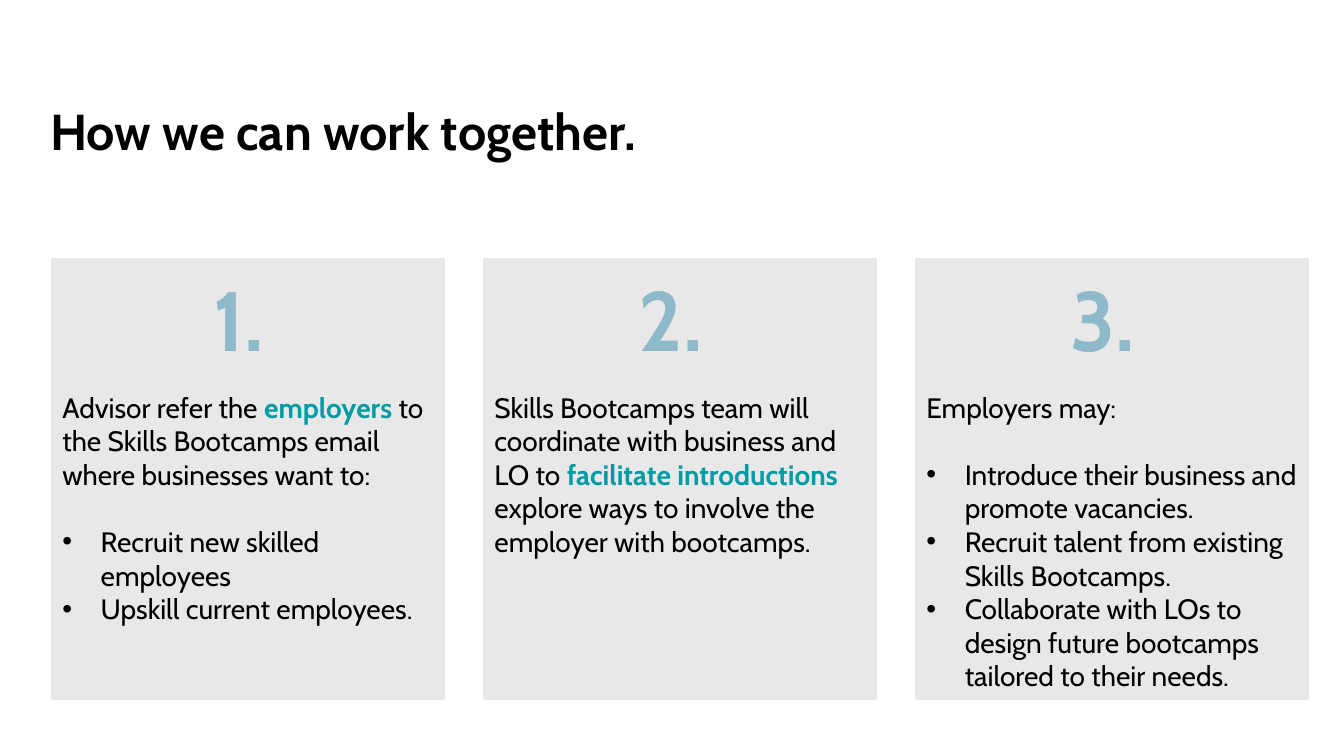
from lxml import etree
from pptx import Presentation
from pptx.dml.color import RGBColor
from pptx.enum.shapes import MSO_SHAPE
from pptx.enum.text import PP_ALIGN
from pptx.oxml.ns import qn
from pptx.util import Inches, Pt

RECTANGLE = MSO_SHAPE.RECTANGLE
LEFT, CENTER = PP_ALIGN.LEFT, PP_ALIGN.CENTER

BLACK = RGBColor(0x00, 0x00, 0x00)
CARD_GREY = RGBColor(0xE8, 0xE8, 0xE8)
NUMBER_BLUE = RGBColor(0x8D, 0xB9, 0xCA)
ACCENT_TEAL = RGBColor(0x00, 0x9C, 0xA6)

FONT = "Cabin"
PAGE_WIDTH, PAGE_HEIGHT = 13.33, 7.5
GRID_LEFT, GRID_RIGHT = 0.52, 12.97
CARD_TOP, CARD_WIDTH, CARD_HEIGHT = 2.57, 3.88, 4.36
NUMBER_TOP, NUMBER_HEIGHT = 2.6, 1.11
BODY_TOP, BODY_HEIGHT = 3.82, 3.1
BULLET_INDENT = 0.38
LIST_GAP = 24

CARDS = [
    (
        [
            ("Advisor refer the ", False),
            ("employers ", True),
            ("to the Skills Bootcamps email where businesses want to:", False),
        ],
        ["Recruit new skilled employees", "Upskill current employees."],
    ),
    (
        [
            ("Skills Bootcamps team will coordinate with business and LO to ", False),
            ("facilitate introductions ", True),
            ("explore ways to involve the employer with bootcamps.", False),
        ],
        [],
    ),
    (
        [("Employers may:", False)],
        [
            "Introduce their business and promote vacancies.",
            "Recruit talent from existing Skills Bootcamps.",
            "Collaborate with LOs to design future bootcamps tailored to their needs.",
        ],
    ),
]


def add_box(page, left, top, width, height):
    box = page.shapes.add_textbox(
        Inches(left), Inches(top), Inches(width), Inches(height)
    )
    box.text_frame.word_wrap = True
    return box.text_frame


def add_span(para, text, size=20, color=BLACK, bold=False):
    span = para.add_run()
    span.text = text
    span.font.name = FONT
    span.font.size = Pt(size)
    span.font.bold = bold
    span.font.color.rgb = color


def add_label(page, text, left, top, width, height, align=LEFT, **style):
    para = add_box(page, left, top, width, height).paragraphs[0]
    para.alignment = align
    add_span(para, text, bold=True, **style)


def set_bullet(para):
    properties = para._p.get_or_add_pPr()
    properties.set("marL", str(Inches(BULLET_INDENT)))
    properties.set("indent", str(-Inches(BULLET_INDENT)))
    typeface = etree.SubElement(properties, qn("a:buFont"))
    typeface.set("typeface", "Arial")
    etree.SubElement(properties, qn("a:buChar")).set("char", "•")


def add_panel(page, left):
    panel = page.shapes.add_shape(
        RECTANGLE, Inches(left), Inches(CARD_TOP), Inches(CARD_WIDTH), Inches(CARD_HEIGHT)
    )
    panel.shadow.inherit = False
    panel.fill.solid()
    panel.fill.fore_color.rgb = CARD_GREY
    panel.line.color.rgb = CARD_GREY
    panel.line.width = Pt(1.5)


def add_body(page, left, intro, bullets):
    frame = add_box(page, left, BODY_TOP, CARD_WIDTH, BODY_HEIGHT)
    for text, highlighted in intro:
        color = ACCENT_TEAL if highlighted else BLACK
        add_span(frame.paragraphs[0], text, color=color, bold=highlighted)
    for index, text in enumerate(bullets):
        para = frame.add_paragraph()
        set_bullet(para)
        para.space_before = Pt(0 if index else LIST_GAP)
        add_span(para, text)


def add_card(page, number, left, intro, bullets):
    add_panel(page, left)
    add_label(page, f"{number}. ", left, NUMBER_TOP, CARD_WIDTH, NUMBER_HEIGHT,
              align=CENTER, size=60, color=NUMBER_BLUE)
    add_body(page, left, intro, bullets)


def main():
    deck = Presentation()
    deck.slide_width, deck.slide_height = Inches(PAGE_WIDTH), Inches(PAGE_HEIGHT)
    page = deck.slides.add_slide(deck.slide_layouts[6])
    add_label(page, "How we can work together.", 0.4, 0.94, 11.04, 0.71, size=36)
    pitch = (GRID_RIGHT - GRID_LEFT - CARD_WIDTH) / (len(CARDS) - 1)
    for index, (intro, bullets) in enumerate(CARDS):
        add_card(page, index + 1, GRID_LEFT + index * pitch, intro, bullets)
    deck.save("out.pptx")


if __name__ == "__main__":
    main()
